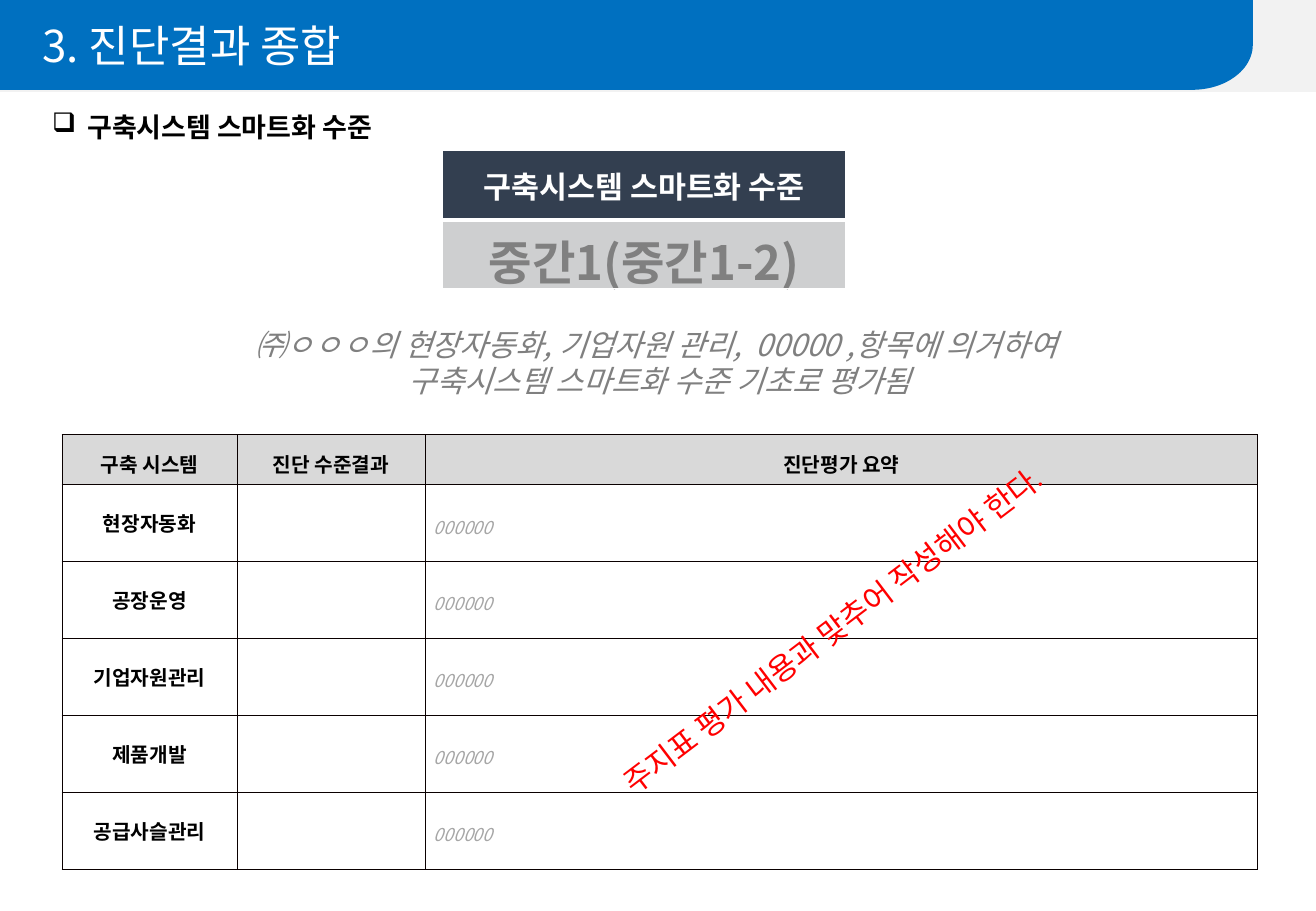
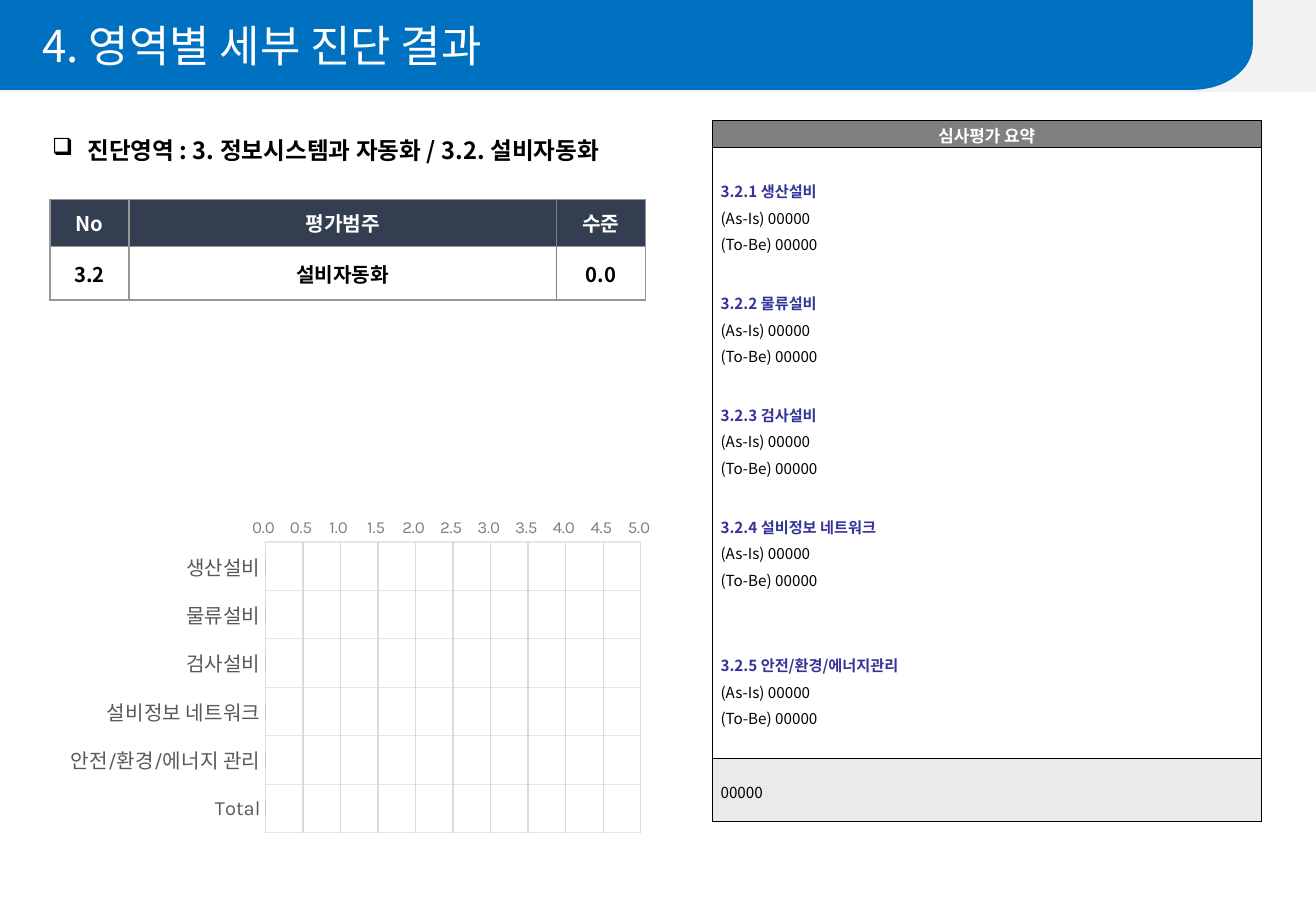
from math import cos, pi, sin

from lxml import etree
from pptx import Presentation
from pptx.chart.data import CategoryChartData
from pptx.dml.color import RGBColor
from pptx.enum.chart import XL_CHART_TYPE, XL_TICK_LABEL_POSITION, XL_TICK_MARK
from pptx.enum.shapes import MSO_SHAPE
from pptx.enum.text import MSO_ANCHOR, MSO_AUTO_SIZE, PP_ALIGN
from pptx.oxml.ns import qn
from pptx.util import Emu, Inches, Pt

BAR = XL_CHART_TYPE.BAR_CLUSTERED
NEXT = XL_TICK_LABEL_POSITION.NEXT_TO_AXIS
NO_TICK = XL_TICK_MARK.NONE
RECT = MSO_SHAPE.RECTANGLE
TOP, MID = MSO_ANCHOR.TOP, MSO_ANCHOR.MIDDLE
GROW = MSO_AUTO_SIZE.SHAPE_TO_FIT_TEXT
LEFT, CENTER, JUST = PP_ALIGN.LEFT, PP_ALIGN.CENTER, PP_ALIGN.JUSTIFY

WHITE = RGBColor(0xFF, 0xFF, 0xFF)
BLACK = RGBColor(0x00, 0x00, 0x00)
INK = RGBColor(0x0A, 0x00, 0x00)
BLUE = RGBColor(0x00, 0x70, 0xC0)
NAVY = RGBColor(0x33, 0x3F, 0x50)
VIOLET = RGBColor(0x33, 0x33, 0x99)
RED = RGBColor(0xFF, 0x00, 0x00)
SLATE = RGBColor(0x59, 0x59, 0x59)
GRAY = RGBColor(0x80, 0x80, 0x80)
STEEL = RGBColor(0x96, 0x96, 0x96)
ASH = RGBColor(0xA6, 0xA6, 0xA6)
SILVER = RGBColor(0xCE, 0xCF, 0xD0)
LIGHT = RGBColor(0xD9, 0xD9, 0xD9)
MIST = RGBColor(0xE7, 0xE6, 0xE6)
PEARL = RGBColor(0xEA, 0xEA, 0xEA)
PALE = RGBColor(0xF2, 0xF2, 0xF2)

SANS, KARLA = "Noto Sans CJK KR", "Karla"
WIDE, HIGH = Inches(10.83), Inches(7.5)
PAD = (0.1, 0.05, 0.1, 0.05)
SLIM = (0.07, 0.02, 0.07, 0.02)


class Deck:
    """Style and current slide; lengths are percent of the slide's size."""

    def __init__(self):
        self.prs = Presentation()
        self.prs.slide_width, self.prs.slide_height = WIDE, HIGH
        self.slide = None

    def area(self, x, y, w, h):
        return [Emu(int(side * part / 100))
                for side, part in zip((WIDE, HIGH) * 2, (x, y, w, h))]

    # Shared page: bands and title
    def page(self, title):
        self.slide = self.prs.slides.add_slide(self.prs.slide_layouts[6])
        shapes = self.slide.shapes
        self.paint(shapes.add_shape(RECT, *self.area(0, 0, 100, 10.1)), PALE)
        edge, base, rx = 95.2, 9.87, 4.6
        ry = base / 2
        arc = [(edge - rx + rx * cos(a), ry + ry * sin(a))
               for a in (pi / 2 * i / 24 for i in range(25))]
        dots = [self.area(x, y, 0, 0)[:2]
                for x, y in [(edge, 0)] + arc + [(0, base)]]
        form = shapes.build_freeform(0, 0)
        form.add_line_segments(dots, close=True)
        self.paint(form.convert_to_shape(), BLUE)
        box = self.text((0, 0, 100, 10), [title], pad=(0.35, 0.2, 0, 0),
                        size=26, color=WHITE, lead=0.9)
        box.text_frame.paragraphs[0].space_before = Pt(9.1)

    def paint(self, shape, color):
        shape.shadow.inherit = False
        shape.fill.solid()
        shape.fill.fore_color.rgb = color
        shape.line.fill.background()

    # Text
    def font(self, run, size, color, bold=False, italic=False, face=SANS):
        font = run.font
        font.size, font.name, font.color.rgb = Pt(size), face, color
        font.bold, font.italic = bold, italic
        east = etree.SubElement(run._r.get_or_add_rPr(), qn("a:ea"))
        east.set("typeface", SANS)

    def put(self, frame, lines, align=LEFT, lead=None, **look):
        frame.text = "\n".join(lines)
        for par in frame.paragraphs:
            par.alignment = align
            if lead:
                par.line_spacing = lead
            for run in par.runs:
                self.font(run, **look)

    def text(self, at, lines, pad=PAD, anchor=TOP, wrap=True, grow=False,
             **look):
        box = self.slide.shapes.add_textbox(*self.area(*at))
        frame = box.text_frame
        frame.word_wrap, frame.vertical_anchor = wrap, anchor
        (frame.margin_left, frame.margin_top,
         frame.margin_right, frame.margin_bottom) = map(Inches, pad)
        if grow:
            frame.auto_size = GROW
        self.put(frame, lines, **look)
        return box

    def head(self, at, line, size):
        box = self.text(at, [line], wrap=False, grow=True, size=size,
                        color=BLACK, bold=True)
        props = box.text_frame.paragraphs[0]._p.get_or_add_pPr()
        hang = Inches(0.29)
        props.set("marL", str(hang))
        props.set("indent", str(-hang))
        etree.SubElement(props, qn("a:buChar")).set("char", "❑")

    # Tables
    def table(self, x, y, cols, rows, color, line):
        at = self.area(x, y, sum(cols), sum(rows))
        tab = self.slide.shapes.add_table(len(rows), len(cols), *at).table
        tab.first_row = tab.horz_banding = False
        for col, part in zip(tab.columns, cols):
            col.width = self.area(0, 0, part, 0)[2]
        for row, part in zip(tab.rows, rows):
            row.height = self.area(0, 0, 0, part)[3]
        for cell in tab.iter_cells():
            self.edge(cell, color, line)
            cell.fill.background()
        return tab

    def edge(self, cell, color, line, sides="LRTB"):
        props = cell._tc.get_or_add_tcPr()
        for side in sides:
            tag = qn("a:ln" + side)
            rule = props.find(tag)
            if rule is None:
                rule = etree.SubElement(props, tag)
            rule.clear()
            rule.set("w", str(Pt(line)))
            fill = etree.SubElement(rule, qn("a:solidFill"))
            etree.SubElement(fill, qn("a:srgbClr")).set("val", str(color))

    def cell(self, cell, lines, fill=None, pad=SLIM, **look):
        (cell.margin_left, cell.margin_top,
         cell.margin_right, cell.margin_bottom) = map(Inches, pad)
        cell.vertical_anchor = MID
        if fill:
            cell.fill.solid()
            cell.fill.fore_color.rgb = fill
        self.put(cell.text_frame, lines, **look)

    # Chart
    def axis(self, axis, size, color, grid):
        axis.major_tick_mark = axis.minor_tick_mark = NO_TICK
        axis.tick_label_position = NEXT
        font = axis.tick_labels.font
        font.size, font.name, font.color.rgb = Pt(size), KARLA, color
        axis.has_major_gridlines = True
        line = axis.major_gridlines.format.line
        line.width, line.color.rgb = Pt(0.75), grid

    def bars(self, at, names, vals):
        data = CategoryChartData()
        data.categories = names
        data.add_series("Series 1", vals)
        chart = self.slide.shapes.add_chart(BAR, *self.area(*at), data).chart
        chart.has_legend = chart.has_title = False
        font = chart.font
        font.size, font.name, font.color.rgb = Pt(10), KARLA, BLACK
        plot = chart.plots[0]
        plot.gap_width, plot.vary_by_categories = 219, False
        bar = plot.series[0]
        last = bar.points[len(names) - 1]
        for part, color in ((bar, NAVY), (last, RED)):
            part.format.fill.solid()
            part.format.fill.fore_color.rgb = color
        cat, val = chart.category_axis, chart.value_axis
        self.axis(cat, 11.9, SLATE, MIST)
        self.axis(val, 10, GRAY, LIGHT)
        cat.reverse_order = True
        cat.format.line.width, cat.format.line.color.rgb = Pt(0.75), LIGHT
        val.format.line.fill.background()
        val.minimum_scale, val.maximum_scale, val.major_unit = 0, 5, 0.5
        val.tick_labels.number_format = "0.0_ "
        val.tick_labels.number_format_is_linked = False
        # Fixed inner plot area
        area = chart._chartSpace.chart.plotArea
        for old in area.findall(qn("c:layout")):
            area.remove(old)
        layout = etree.Element(qn("c:layout"))
        area.insert(0, layout)
        manual = etree.SubElement(layout, qn("c:manualLayout"))
        for tag, val in (("layoutTarget", "inner"), ("xMode", "edge"),
                         ("yMode", "edge"), ("x", "0.36"), ("y", "0.09"),
                         ("w", "0.6"), ("h", "0.89")):
            etree.SubElement(manual, qn("c:" + tag)).set("val", val)


def total(deck):
    deck.page("3. 진단결과 종합")
    deck.head((3.05, 11.47, 28.9, 4.93), "구축시스템 스마트화 수준", 16)

    # Overall level
    tab = deck.table(33.61, 16.53, [30.66], [7.6, 7.47], WHITE, 1)
    top, low = tab.cell(0, 0), tab.cell(1, 0)
    deck.edge(top, WHITE, 3, "B")
    deck.edge(low, WHITE, 3, "T")
    bold = dict(pad=PAD, align=CENTER, bold=True)
    deck.cell(top, ["구축시스템 스마트화 수준"], NAVY, size=18, color=WHITE, **bold)
    deck.cell(low, ["중간1(중간1-2)"], SILVER, size=28, color=GRAY, **bold)

    # Results by system
    names = ["현장자동화", "공장운영", "기업자원관리", "제품개발", "공급사슬관리"]
    tab = deck.table(4.71, 47.73, [13.3, 14.31, 63.25],
                     [5.47] + [8.45] * len(names), INK, 0.56)
    bold = dict(align=CENTER, size=12, color=BLACK, bold=True)
    for col, name in enumerate(["구축 시스템", "진단 수준결과", "진단평가 요약"]):
        deck.cell(tab.cell(0, col), [name], LIGHT, lead=1.25, **bold)
    for row, name in enumerate(names, 1):
        deck.cell(tab.cell(row, 0), [name], **bold)
        deck.cell(tab.cell(row, 2), ["000000"], lead=1.25, size=10.5,
                  align=JUST if row == 1 else LEFT, color=ASH, italic=True)

    # Verdict and slanted remark
    deck.text((12.83, 35.07, 74.6, 9.47),
              ["㈜ㅇㅇㅇ의 현장자동화, 기업자원 관리,  00000 ,항목에 의거하여 ",
               "구축시스템 스마트화 수준 기초로 평가됨"],
              anchor=MID, grow=True, align=CENTER, size=18, color=GRAY,
              italic=True)
    note = deck.text((42.47, 65.33, 43.67, 5.33),
                     ["주지표 평가 내용과 맞추어 작성해야 한다."], wrap=False,
                     grow=True, size=18, color=RED, face=KARLA)
    note.rotation = 322.8


def detail(deck):
    deck.page("4. 영역별 세부 진단 결과")
    deck.head((3.05, 14.27, 47.55, 4.53),
              "진단영역 : 3. 정보시스템과 자동화 / 3.2. 설비자동화", 14)
    deck.bars((3.05, 56.27, 47.55, 35.87),
              ["생산설비", "물류설비", "검사설비", "설비정보 네트워크",
               "안전/환경/에너지 관리", "Total"], [0] * 6)

    # Category level
    tab = deck.table(3.79, 21.87, [6, 32.5, 6.74], [5.2, 5.87], STEEL, 1)
    rows = [(["No", "평가범주", "수준"], NAVY, WHITE, (0.08, 0.04, 0.08, 0.04)),
            (["3.2", "설비자동화", "0.0"], None, BLACK, (0.01, 0.01, 0.01, 0))]
    for row, (names, fill, color, pad) in enumerate(rows):
        for col, name in enumerate(names):
            deck.cell(tab.cell(row, col), [name], fill, pad, align=CENTER,
                      size=12, color=color, bold=True)
        deck.edge(tab.cell(row, 1), GRAY, 1, "R")
        deck.edge(tab.cell(row, 2), GRAY, 1, "L")

    # Review summary
    tab = deck.table(54.11, 13.2, [41.74], [2.93, 67.07, 6.93], BLACK, 0.28)
    head, body, foot = (tab.cell(row, 0) for row in range(3))
    deck.cell(head, ["심사평가 요약"], GRAY, align=CENTER, size=10,
              color=WHITE, bold=True)
    names = ["생산설비", "물류설비", "검사설비", "설비정보 네트워크",
             "안전/환경/에너지관리"]
    lines = []
    for num, name in enumerate(names, 1):
        lines += [f"3.2.{num} {name}", "(As-Is) 00000", "(To-Be) 00000"]
    plain = dict(lead=1.2, size=9, color=BLACK)
    deck.cell(body, lines, **plain)
    deck.cell(foot, ["00000"], PEARL, **plain)
    for par, gap in zip(body.text_frame.paragraphs[::3], (0, 19.3, 19.3, 19.3, 35)):
        par.space_before = Pt(gap)
        font = par.runs[0].font
        font.bold, font.color.rgb = True, VIOLET


def main():
    deck = Deck()
    total(deck)
    detail(deck)
    deck.prs.save("out.pptx")


if __name__ == "__main__":
    main()
